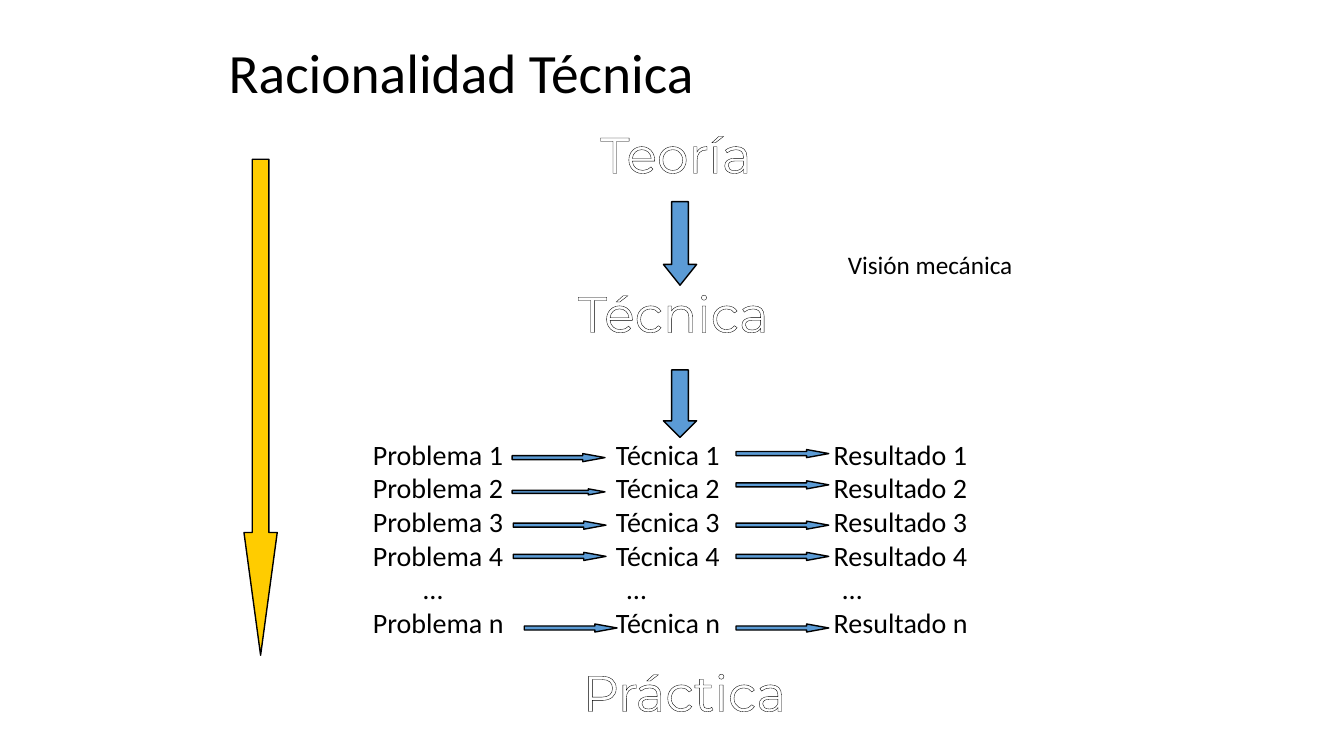
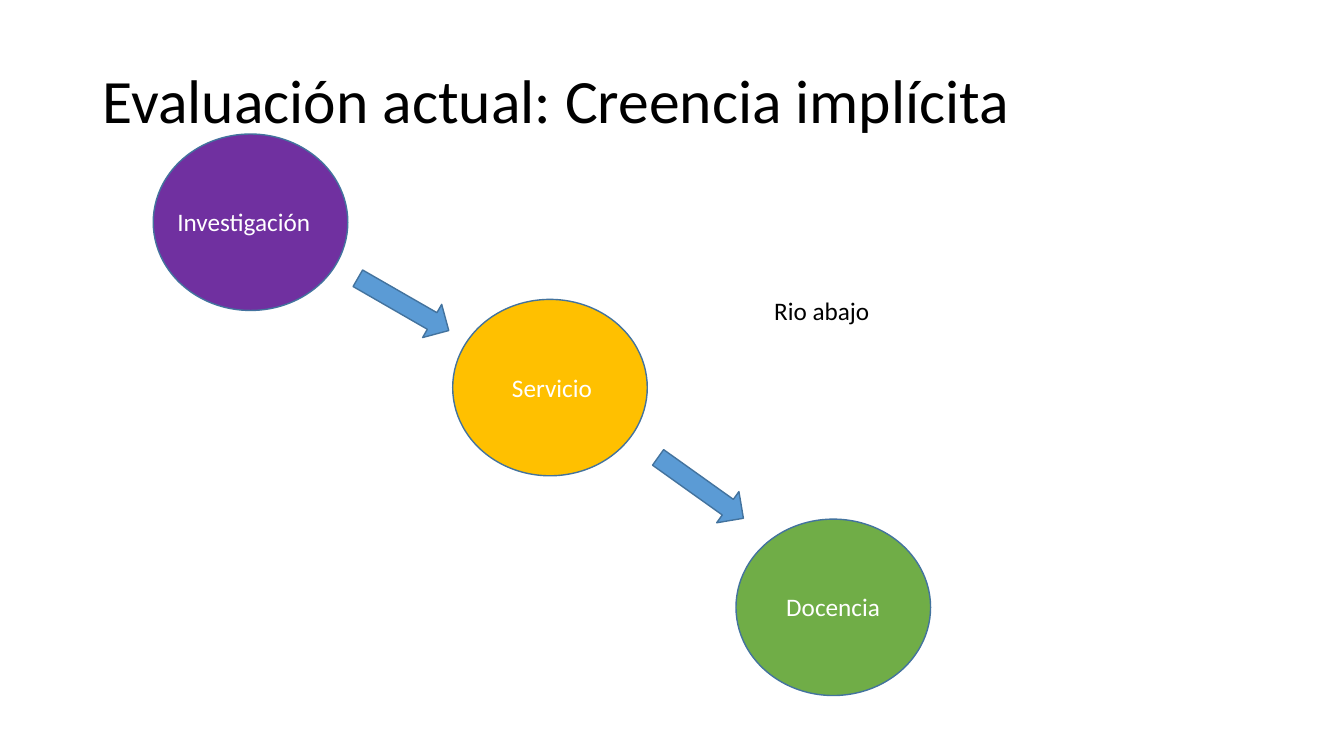
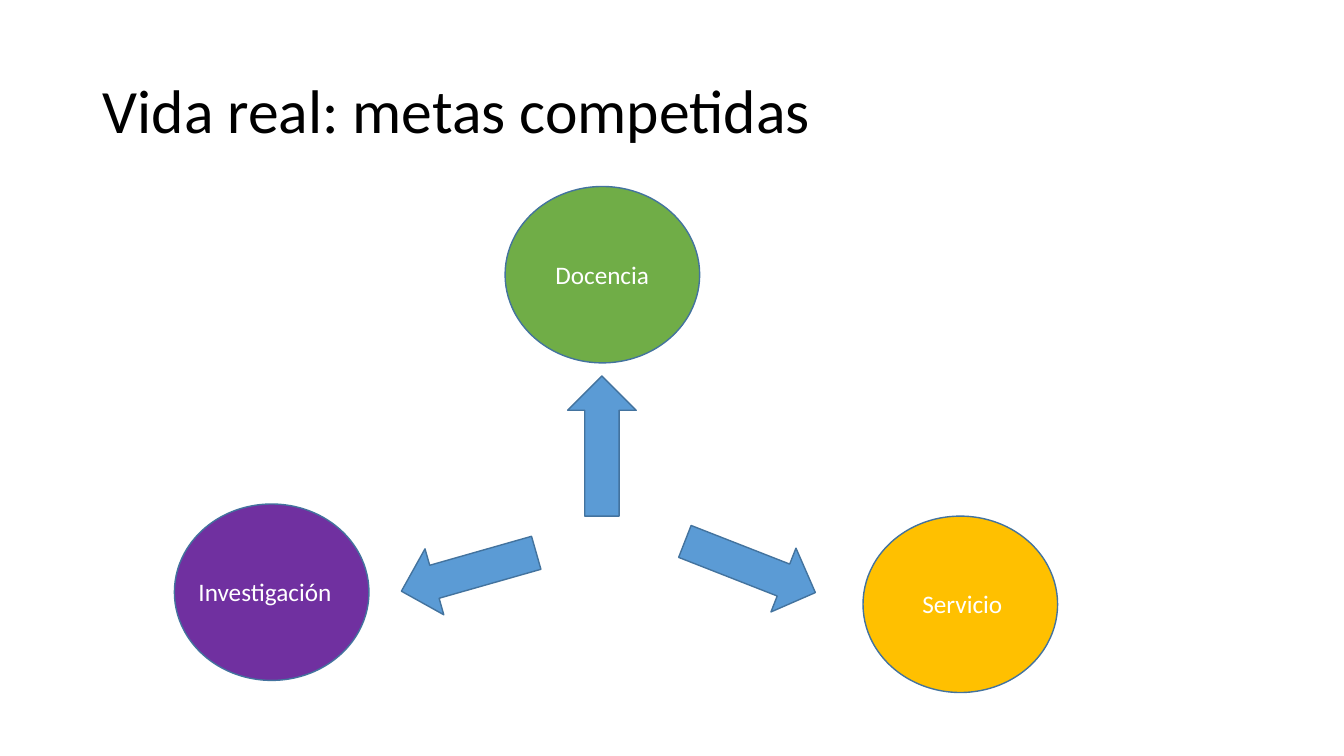
from pptx import Presentation
from pptx.dml.color import RGBColor
from pptx.enum.shapes import MSO_SHAPE
from pptx.enum.text import MSO_ANCHOR, PP_ALIGN
from pptx.oxml import parse_xml
from pptx.oxml.ns import nsdecls
from pptx.util import Inches, Pt

BLACK = RGBColor(0x00, 0x00, 0x00)
WHITE = RGBColor(0xFF, 0xFF, 0xFF)
BLUE = RGBColor(0x5B, 0x9B, 0xD5)
EDGE = RGBColor(0x43, 0x73, 0x9E)
YELLOW = RGBColor(0xFF, 0xCC, 0x00)
GREEN = RGBColor(0x70, 0xAD, 0x47)
PURPLE = RGBColor(0x70, 0x30, 0xA0)
GOLD = RGBColor(0xFF, 0xC0, 0x00)

CIRCLE_SIZE = (1.93, 1.75)
CIRCLES = {
    "Docencia": (GREEN, 0.4, 1.37),
    "Investigación": (PURPLE, 0.14, 1.71),
    "Servicio": (GOLD, 0.49, 1.33),
}


def add_text(page, place, lines, size=18, color=BLACK, font="Calibri", wrap=True):
    box = page.shapes.add_textbox(*[Inches(value) for value in place])
    box.text_frame.word_wrap = wrap
    for index, line in enumerate(lines):
        paragraph = box.text_frame.paragraphs[0] if index == 0 else box.text_frame.add_paragraph()
        span = paragraph.add_run()
        span.text = line
        span.font.size = Pt(size)
        span.font.name = font
        span.font.color.rgb = color
    return box


def add_figure(page, kind, place, fill=BLUE, edge=EDGE, rotation=0, adjustments=()):
    figure = page.shapes.add_shape(kind, *[Inches(value) for value in place])
    figure.shadow.inherit = False
    figure.fill.solid()
    figure.fill.fore_color.rgb = fill
    figure.line.color.rgb = edge
    figure.line.width = Pt(1)
    figure.rotation = rotation
    for index, value in enumerate(adjustments):
        figure.adjustments[index] = value
    return figure


deck = Presentation()
deck.slide_width = Inches(13.33)
deck.slide_height = Inches(7.5)

pages = []
for title, place, size in [
    ("Racionalidad Técnica", (2.17, 0.42, 9, 0.66), 39.6),
    ("Evaluación actual: Creencia implícita", (0.92, 0.3, 11.5, 1.45), 44),
    ("Vida real: metas competidas", (0.92, 0.4, 11.5, 1.45), 44),
]:
    page = deck.slides.add_slide(deck.slide_layouts[6])
    box = add_text(page, place, [title], size)
    box.text_frame.vertical_anchor = MSO_ANCHOR.MIDDLE
    box.text_frame.paragraphs[0].line_spacing = 0.9
    pages.append(page)
technical, downstream, competing = pages

for level, place in [
    ("Teoría", (5.83, 1.17, 1.75, 0.71)),
    ("Técnica", (5.58, 2.75, 2.2, 0.71)),
    ("Práctica", (5.64, 6.51, 2.3, 0.71)),
]:
    box = add_text(technical, place, [level], 36, WHITE, "Montserrat", wrap=False)
    paragraph = box.text_frame.paragraphs[0]
    paragraph.alignment = PP_ALIGN.CENTER
    outline = parse_xml(
        f'<a:ln {nsdecls("a")} w="9525"><a:solidFill>'
        f'<a:srgbClr val="{BLACK}"/></a:solidFill></a:ln>'
    )
    paragraph.runs[0].font._element.insert(0, outline)

rows = [f"Problema {item}\tTécnica {item}\tResultado {item}" for item in "1234n"]
rows.insert(4, "\t…\t…\t…")
box = add_text(technical, (3.6, 4.29, 6.31, 2.46), rows, 20)
for paragraph, row in zip(box.text_frame.paragraphs, rows):
    stops = (0.5, 2.52, 4.66) if row.startswith("\t") else (2.41, 4.57)
    tabs = "".join(f'<a:tab pos="{Inches(stop)}" algn="l"/>' for stop in stops)
    paragraph._p.get_or_add_pPr().append(
        parse_xml(f'<a:tabLst {nsdecls("a")}>{tabs}</a:tabLst>')
    )

for left, top, height in [
    (5.08, 4.5, 0.08), (5.08, 4.85, 0.06), (5.09, 5.17, 0.08), (5.09, 5.48, 0.08), (5.2, 6.19, 0.08),
    (7.3, 4.46, 0.08), (7.3, 4.77, 0.08), (7.3, 5.17, 0.08), (7.3, 5.48, 0.08), (7.3, 6.19, 0.08),
]:
    add_figure(technical, MSO_SHAPE.RIGHT_ARROW, (left, top, 0.92, height),
               edge=BLACK, adjustments=(0.5, 2.75))

for left, top, height, fill, head in [
    (6.58, 2, 0.83, BLUE, 0.625),
    (6.58, 3.67, 0.67, BLUE, 0.5),
    (2.42, 1.58, 4.92, YELLOW, 3.688),
]:
    add_figure(technical, MSO_SHAPE.DOWN_ARROW, (left, top, 0.33, height),
               fill, BLACK, adjustments=(0.5, head))

add_text(technical, (8.31, 2.42, 1.91, 0.4), ["Visión mecánica"], wrap=False)

for page, name, left, top in [
    (downstream, "Docencia", 7.3, 5.15),
    (downstream, "Investigación", 1.52, 1.33),
    (downstream, "Servicio", 4.49, 2.97),
    (competing, "Docencia", 5.01, 1.85),
    (competing, "Investigación", 1.73, 5),
    (competing, "Servicio", 8.56, 5.12),
]:
    fill, indent, width = CIRCLES[name]
    add_figure(page, MSO_SHAPE.OVAL, (left, top, *CIRCLE_SIZE), fill)
    add_text(page, (left + indent, top + 0.67, width, 0.4), [name], color=WHITE)

for left, top, rotation in [(3.48, 2.83, 29.9), (6.43, 4.65, 35.5)]:
    add_figure(downstream, MSO_SHAPE.RIGHT_ARROW, (left, top, 1.04, 0.38), rotation=rotation)
add_text(downstream, (7.58, 2.88, 1.99, 0.4), ["Rio abajo"])

for left, top, rotation in [(5.63, 3.73, 180), (4.31, 4.98, 74.1), (7.1, 4.93, 291.4)]:
    add_figure(competing, MSO_SHAPE.DOWN_ARROW, (left, top, 0.68, 1.39), rotation=rotation)

deck.save("out.pptx")
